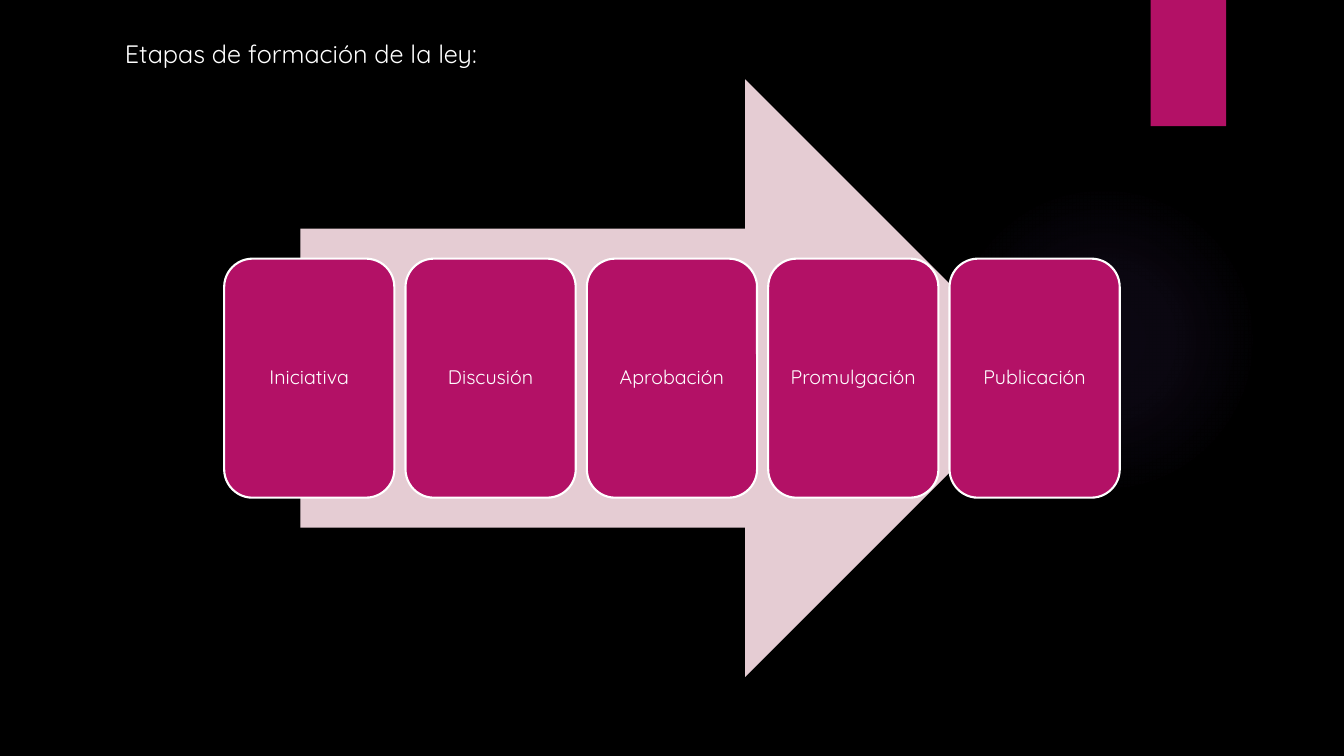
from lxml import etree
from pptx import Presentation
from pptx.dml.color import RGBColor
from pptx.enum.shapes import MSO_SHAPE as SHAPE
from pptx.enum.text import MSO_ANCHOR as ANCHOR, PP_ALIGN as ALIGN
from pptx.oxml import parse_xml
from pptx.oxml.ns import nsdecls, qn
from pptx.util import Cm, Pt

COLORS = {"black": "000000", "white": "FFFFFF", "magenta": "B31166",
          "rose": "E5CCD3", "violet": "9B6BF2"}
FONT = "Quicksand"
STAGES = ["Iniciativa", "Discusión", "Aprobación", "Promulgación", "Publicación"]
GLOW_STOPS = [(0, 7), (36, 6), (69, 0)]


def rgb(name):
    """Return the palette colour called name."""
    return RGBColor.from_string(COLORS[name])


def add_block(slide, kind, box, color):
    """Add a flat preset shape in a box given in centimetres."""
    sp = slide.shapes.add_shape(kind, *map(Cm, box))
    sp.shadow.inherit = False
    sp.fill.solid()
    sp.fill.fore_color.rgb = rgb(color)
    sp.line.fill.background()
    return sp


def write(tf, text, size):
    """Put one formatted paragraph in a text frame and return it."""
    tf.word_wrap = True
    tf.text = text
    p = tf.paragraphs[0]
    font = p.runs[0].font
    font.name, font.size = FONT, Pt(size)
    font.color.rgb = rgb("white")
    return p


def add_glow(slide, box):
    """Add the faint radial glow."""
    sp = add_block(slide, SHAPE.OVAL, box, "violet")
    grad = parse_xml(f'<a:gradFill {nsdecls("a")}><a:gsLst/><a:path path="circle">'
                     '<a:fillToRect l="50000" t="50000" r="50000" b="50000"/>'
                     '</a:path></a:gradFill>')
    for pos, alpha in GLOW_STOPS:
        gs = etree.SubElement(grad[0], qn("a:gs"), pos=str(pos * 1000))
        clr = etree.SubElement(gs, qn("a:srgbClr"), val=COLORS["violet"])
        etree.SubElement(clr, qn("a:alpha"), val=str(alpha * 1000))
    spPr = sp.element.spPr
    spPr.replace(spPr.find(qn("a:solidFill")), grad)


def add_title(slide, box):
    """Add the slide heading."""
    tf = slide.shapes.add_textbox(*map(Cm, box)).text_frame
    write(tf, "Etapas de formación de la ley:", 18)


def add_process(slide, box):
    """Add the wide arrow and the row of stage cards over it."""
    left, top, width, height = box
    inset = width * 0.085
    add_block(slide, SHAPE.RIGHT_ARROW,
              (left + inset, top, width - 2 * inset, height), "rose")
    pitch, card_w, card_h = 4.57, 4.29, height * 0.4
    for i, stage in enumerate(STAGES):
        card = add_block(slide, SHAPE.ROUNDED_RECTANGLE,
                         (left + i * pitch, top + height * 0.3, card_w, card_h),
                         "magenta")
        card.line.color.rgb = rgb("white")
        card.line.width = Pt(1.5)
        tf = card.text_frame
        tf.vertical_anchor = ANCHOR.MIDDLE
        tf.margin_left = tf.margin_right = Cm(0.15)
        tf.margin_top = tf.margin_bottom = Cm(0.15)
        p = write(tf, stage, 14)
        p.alignment = ALIGN.CENTER
        p.line_spacing = 0.9


def main():
    """Build and save the slide."""
    prs = Presentation()
    prs.slide_width, prs.slide_height = Cm(33.87), Cm(19.05)
    slide = prs.slides.add_slide(prs.slide_layouts[6])
    slide.background.fill.solid()
    slide.background.fill.fore_color.rgb = rgb("black")
    add_glow(slide, (23.9, 4.65, 7.82, 7.82))
    add_block(slide, SHAPE.RECTANGLE, (29, 0, 1.9, 3.18), "magenta")
    add_title(slide, (2.9, 0.84, 26.44, 1.03))
    add_process(slide, (5.65, 2, 22.58, 15.06))
    prs.save("out.pptx")


if __name__ == "__main__":
    main()
